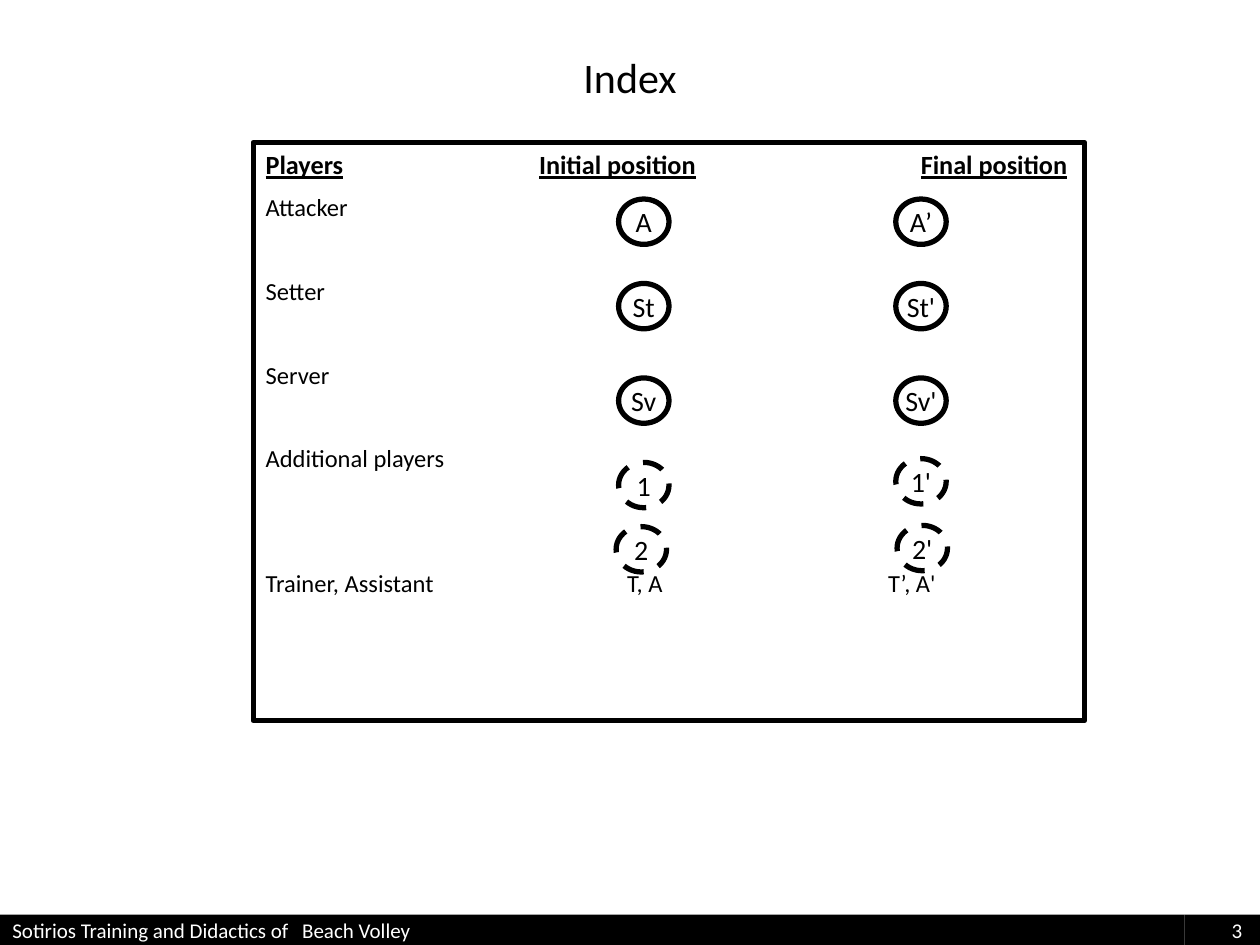
"""Build the index slide that explains the beach volleyball player symbols."""
from dataclasses import dataclass

import pptx
import pptx.dml.color
import pptx.enum.dml
import pptx.enum.shapes
import pptx.enum.text
import pptx.oxml.ns
import pptx.util
from lxml import etree

Inches = pptx.util.Inches
Pt = pptx.util.Pt
Align = pptx.enum.text.PP_ALIGN
Anchor = pptx.enum.text.MSO_ANCHOR
Shapes = pptx.enum.shapes.MSO_SHAPE


@dataclass(frozen=True)
class Theme:
    font: str = "Calibri"
    black: str = "000000"
    white: str = "FFFFFF"
    title: int = 24
    symbol: int = 16
    header: int = 15
    body: int = 14
    footer: int = 12
    outline: int = 3


THEME = Theme()
SYMBOL_SIZE = (0.4, 0.36)
INITIAL_LEFT, FINAL_LEFT = 4.91, 7.11
HEADER_TABS = (2.17, 5.2)
TRAINER_TABS = (2.87, 4.94)
ROWS = [
    ("Attacker", 7),
    ("Setter", 31),
    ("Server", 31),
    ("Additional players", 31),
    ("Trainer, Assistant\tT, A\tT’, A'", 54.5),
]
PLAYERS = [("A", "A’", 1.58), ("St", "St'", 2.25), ("Sv", "Sv'", 3)]
ADDITIONAL_PLAYERS = [
    ("1", INITIAL_LEFT, 3.67),
    ("1'", FINAL_LEFT, 3.64),
    ("2", 4.89, 4.18),
    ("2'", 7.12, 4.17),
]


def color(value):
    return pptx.dml.color.RGBColor.from_string(value)


def add_span(para, text, size, ink=THEME.black, bold=False, underline=False):
    span = para.add_run()
    span.text = text
    span.font.name = THEME.font
    span.font.size = Pt(size)
    span.font.bold = bold
    span.font.underline = underline
    span.font.color.rgb = color(ink)


def set_tabs(para, stops):
    qn = pptx.oxml.ns.qn
    tabs = etree.SubElement(para._p.get_or_add_pPr(), qn("a:tabLst"))
    for stop in stops:
        etree.SubElement(tabs, qn("a:tab"), pos=str(Inches(stop)), algn="l")


def add_box(page, kind, left, top, width, height, fill=None):
    box = page.shapes.add_shape(
        kind, Inches(left), Inches(top), Inches(width), Inches(height)
    )
    box.shadow.inherit = False
    if fill:
        box.fill.solid()
        box.fill.fore_color.rgb = color(fill)
        box.line.fill.background()
    else:
        box.fill.background()
        box.line.color.rgb = color(THEME.black)
        box.line.width = Pt(THEME.outline)
    return box


def add_title(page, text):
    box = page.shapes.title
    box.left, box.top = Inches(0.69), Inches(0.4)
    box.width, box.height = Inches(8.62), Inches(0.63)
    frame = box.text_frame
    frame.auto_size = pptx.enum.text.MSO_AUTO_SIZE.NONE
    frame.vertical_anchor = Anchor.TOP
    para = frame.paragraphs[0]
    para.alignment = Align.CENTER
    para.line_spacing = 0.9
    add_span(para, text, THEME.title)


def add_footer(page, left, width, text, alignment, tabs=()):
    box = add_box(page, Shapes.RECTANGLE, left, 7.26, width, 0.24, THEME.black)
    frame = box.text_frame
    frame.vertical_anchor = Anchor.MIDDLE
    frame.margin_right = Inches(0.14)
    para = frame.paragraphs[0]
    para.alignment = alignment
    set_tabs(para, tabs)
    add_span(para, text, THEME.footer, THEME.white)


def add_legend(page):
    box = add_box(page, Shapes.RECTANGLE, 2.01, 1.13, 6.6, 4.59)
    frame = box.text_frame
    frame.word_wrap = True
    frame.vertical_anchor = Anchor.TOP
    header = frame.paragraphs[0]
    header.alignment = Align.LEFT
    set_tabs(header, HEADER_TABS)
    add_span(header, "Players\tInitial position\tFinal position", THEME.header,
             bold=True, underline=True)
    for text, gap in ROWS:
        para = frame.add_paragraph()
        para.alignment = Align.LEFT
        para.space_before = Pt(gap)
        set_tabs(para, TRAINER_TABS)
        add_span(para, text, THEME.body)


def add_symbol(page, label, left, top, dashed=False):
    box = add_box(page, Shapes.OVAL, left, top, *SYMBOL_SIZE)
    if dashed:
        box.line.dash_style = pptx.enum.dml.MSO_LINE.DASH
    frame = box.text_frame
    frame.word_wrap = False
    frame.vertical_anchor = Anchor.MIDDLE
    para = frame.paragraphs[0]
    para.alignment = Align.CENTER
    add_span(para, label, THEME.symbol)


def main():
    deck = pptx.Presentation()
    deck.slide_width, deck.slide_height = Inches(10), Inches(7.5)
    page = deck.slides.add_slide(deck.slide_layouts[5])
    add_title(page, "Index")
    add_footer(page, 9.4, 0.6, "3", Align.RIGHT)
    add_footer(page, 0, 9.4, "Sotirios Training and Didactics of\tBeach Volley",
               Align.LEFT, (2.3,))
    add_legend(page)
    for initial, final, top in PLAYERS:
        add_symbol(page, initial, INITIAL_LEFT, top)
        add_symbol(page, final, FINAL_LEFT, top)
    for label, left, top in ADDITIONAL_PLAYERS:
        add_symbol(page, label, left, top, dashed=True)
    deck.save("out.pptx")


if __name__ == "__main__":
    main()
